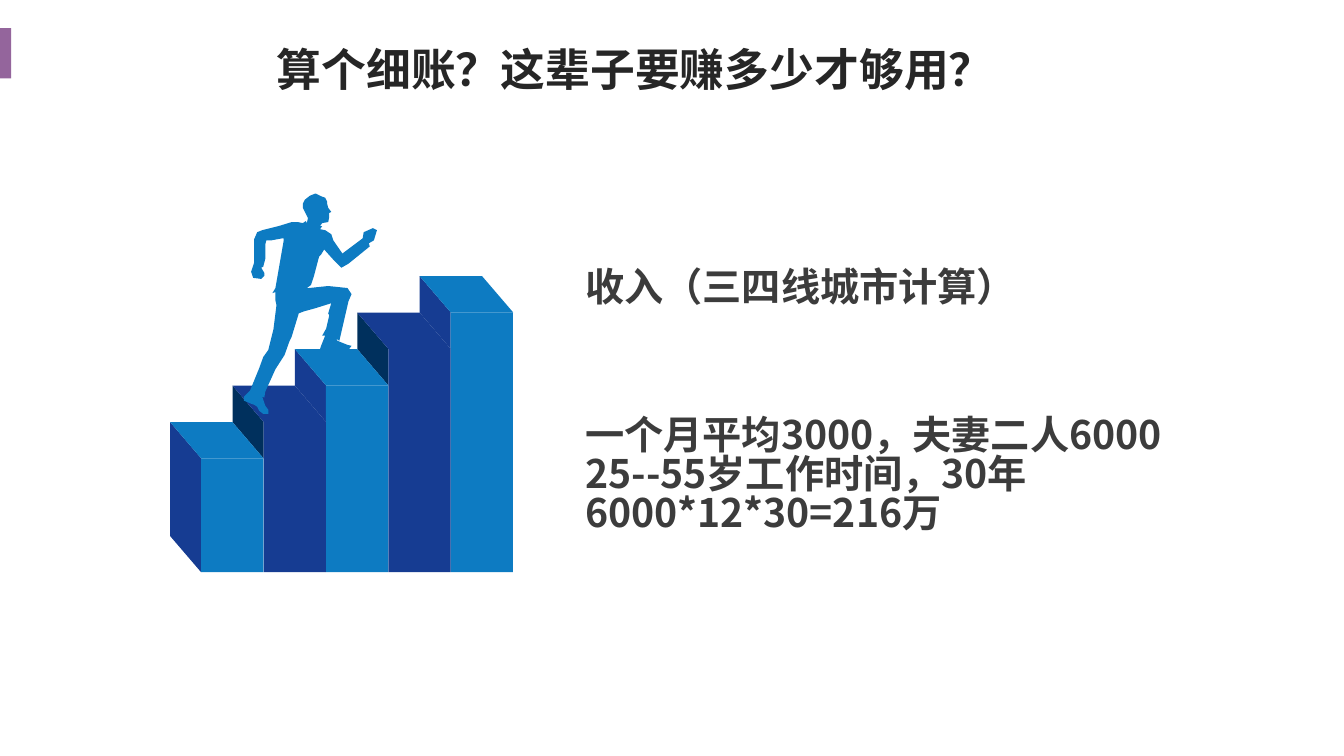
from lxml.etree import SubElement
from pptx import Presentation
from pptx.dml.color import RGBColor
from pptx.enum.lang import MSO_LANGUAGE_ID
from pptx.enum.shapes import MSO_SHAPE
from pptx.enum.text import MSO_ANCHOR, MSO_AUTO_SIZE, PP_ALIGN
from pptx.oxml.ns import qn
from pptx.util import Cm, Pt

FONT = "Noto Sans CJK SC"
TITLE_COLOR = RGBColor(0x26, 0x26, 0x26)
BODY_COLOR = RGBColor(0x3C, 0x3C, 0x3C)
PURPLE = RGBColor(0x94, 0x65, 0x9C)
LIGHT_BLUE = RGBColor(0x0D, 0x7B, 0xC2)
DARK_BLUE = RGBColor(0x16, 0x3C, 0x92)
NAVY = RGBColor(0x00, 0x30, 0x5D)

RUNNER_WIDTH = 131
RUNNER_OUTLINE = [
    (127, 34), (118, 38), (117, 44), (97, 59), (88, 46), (86, 40), (80, 36),
    (75, 35), (77, 32), (75, 32), (77, 29), (83, 28), (84, 23), (84, 19),
    (86, 18), (83, 14), (82, 10), (82, 8), (81, 6), (80, 4), (77, 3),
    (75, 2), (71, 0), (70, 0), (65, 2), (60, 6), (58, 10), (58, 14), (60, 18),
    (63, 24), (62, 29), (61, 27), (58, 29), (53, 28), (47, 28), (34, 32),
    (18, 36), (13, 38), (10, 45), (10, 68), (7, 77), (9, 83), (17, 84),
    (20, 81), (20, 78), (17, 73), (19, 72), (21, 64), (21, 50), (22, 46),
    (27, 46), (38, 44), (39, 44), (39, 47), (31, 93), (28, 98), (31, 97),
    (31, 105), (32, 110), (29, 134), (24, 154), (19, 161), (15, 172),
    (6, 194), (0, 200), (0, 204), (7, 207), (10, 208), (13, 210), (15, 214),
    (19, 217), (24, 217), (24, 213), (21, 209), (18, 200), (20, 201),
    (21, 195), (31, 173), (40, 159), (45, 145), (47, 141), (54, 118),
    (59, 116), (70, 113), (86, 108), (83, 118), (84, 120), (81, 133),
    (77, 140), (80, 140), (76, 150), (75, 153), (82, 156), (89, 156),
    (97, 158), (103, 154), (106, 150), (102, 149), (92, 145), (91, 143),
    (94, 145), (103, 106), (106, 99), (102, 93), (83, 91), (64, 93),
    (62, 93), (66, 90), (69, 81), (74, 62), (76, 60), (79, 55), (88, 65),
    (96, 73), (103, 69), (124, 52), (123, 49), (128, 46), (131, 36),
]


def paint(shape, color):
    """Give the shape a plain fill without line or shadow."""
    shape.shadow.inherit = False
    shape.fill.solid()
    shape.fill.fore_color.rgb = color
    shape.line.fill.background()


def add_polygon(slide, points, color):
    """Draw a filled polygon through the given points."""
    builder = slide.shapes.build_freeform(*points[0])
    builder.add_line_segments(points[1:])
    paint(builder.convert_to_shape(), color)


def add_block(slide, left, top, width, height, color):
    """Draw a filled rectangle."""
    paint(slide.shapes.add_shape(MSO_SHAPE.RECTANGLE, left, top, width, height), color)


def fill_placeholder(placeholder, box, lines, size, color):
    """Place a placeholder in the box and set its lines in bold."""
    placeholder.left, placeholder.top, placeholder.width, placeholder.height = box
    frame = placeholder.text_frame
    frame.text = "\n".join(lines)
    frame.word_wrap = True
    frame.auto_size = MSO_AUTO_SIZE.NONE
    for paragraph in frame.paragraphs:
        paragraph.space_before = Pt(0)
        for run in paragraph.runs:
            font = run.font
            font.name, font.size, font.bold = FONT, Pt(size), True
            font.color.rgb = color
            font.language_id = MSO_LANGUAGE_ID.SIMPLIFIED_CHINESE
            SubElement(run._r.rPr, qn("a:ea")).set("typeface", FONT)


def add_title(slide, box, text):
    """Set the centred title with the purple tab at the slide's edge."""
    title = slide.shapes.title
    fill_placeholder(title, box, [text], 32, TITLE_COLOR)
    title.text_frame.vertical_anchor = MSO_ANCHOR.MIDDLE
    title.text_frame.paragraphs[0].alignment = PP_ALIGN.CENTER
    add_block(slide, 0, box[1], Cm(0.28), Cm(1.27), PURPLE)


def add_body(placeholder, box, lines):
    """Set plain unbulleted lines in a body placeholder."""
    fill_placeholder(placeholder, box, lines, 28, BODY_COLOR)
    placeholder.text_frame.vertical_anchor = MSO_ANCHOR.TOP
    for paragraph in placeholder.text_frame.paragraphs:
        paragraph.line_spacing = 0.83
        properties = paragraph._p.get_or_add_pPr()
        properties.set("marL", "0")
        properties.set("indent", "0")
        SubElement(properties, qn("a:buNone"))


def add_staircase(slide, box, count=5):
    """Draw rising columns in depth, from the tallest to the lowest."""
    left, top, width, height = box
    depth_x, depth_y, step = Cm(0.78), Cm(0.91), Cm(0.92)
    column_width = (width - depth_x) // count
    base = top + height
    for index in reversed(range(count)):
        front_left = left + depth_x + index * column_width
        front_top = top + depth_y + (count - 1 - index) * step
        back_left, back_top = front_left - depth_x, front_top - depth_y
        front_right = front_left + column_width
        front_color = DARK_BLUE if index % 2 else LIGHT_BLUE
        side_color = NAVY if index % 2 else DARK_BLUE
        side_bottom = front_top + step if index else base
        add_polygon(slide, [(front_left, front_top), (back_left, back_top),
                            (back_left, side_bottom - depth_y),
                            (front_left, side_bottom)], side_color)
        add_polygon(slide, [(back_left, back_top),
                            (front_right - depth_x, back_top),
                            (front_right, front_top),
                            (front_left, front_top)], front_color)
        add_block(slide, front_left, front_top, column_width,
                  base - front_top, front_color)


def add_runner(slide, left, top, width):
    """Draw the running figure at the given width."""
    scale = width / RUNNER_WIDTH
    points = [(round(left + x * scale), round(top + y * scale))
              for x, y in RUNNER_OUTLINE]
    add_polygon(slide, points, LIGHT_BLUE)


def main():
    """Build and save the income slide."""
    presentation = Presentation()
    presentation.slide_width, presentation.slide_height = Cm(33.87), Cm(19.05)
    slide = presentation.slides.add_slide(presentation.slide_layouts[3])
    add_title(slide, (Cm(0.71), Cm(0.71), Cm(30.61), Cm(2.06)),
              "算个细账？这辈子要赚多少才够用？")
    add_staircase(slide, (Cm(4.29), Cm(6.96), Cm(8.64), Cm(7.46)))
    add_runner(slide, Cm(6.15), Cm(4.88), Cm(3.35))
    add_body(slide.placeholders[1], (Cm(14.5), Cm(6.68), Cm(16.28), Cm(1.45)),
             ["收入（三四线城市计算）"])
    add_body(slide.placeholders[2], (Cm(14.5), Cm(10.41), Cm(16.28), Cm(3.84)),
             ["一个月平均3000，夫妻二人6000", "25--55岁工作时间，30年", "6000*12*30=216万"])
    presentation.save("out.pptx")


if __name__ == "__main__":
    main()
